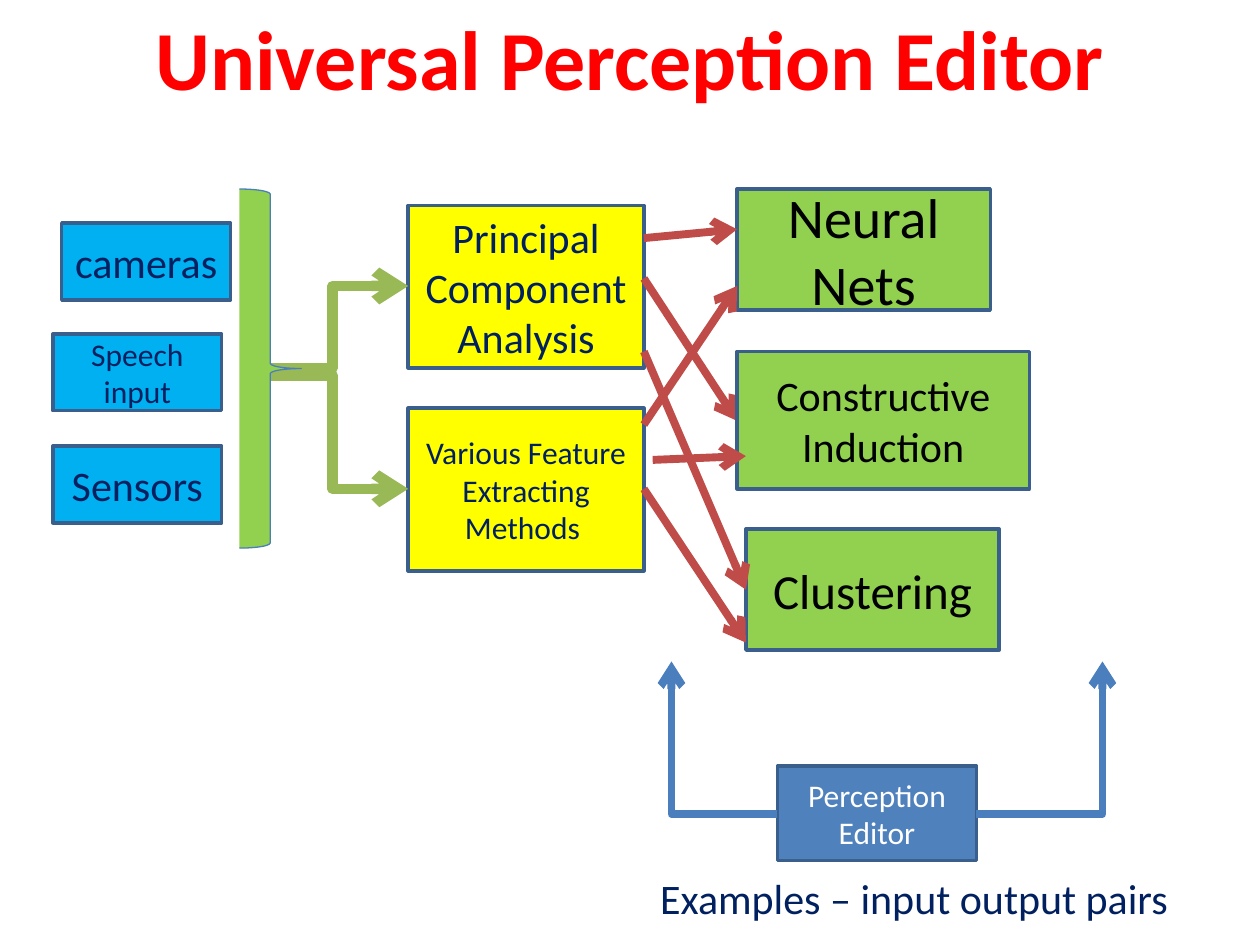
from dataclasses import dataclass

from lxml import etree
from pptx import Presentation
from pptx.dml.color import RGBColor
from pptx.enum.shapes import MSO_CONNECTOR, MSO_SHAPE
from pptx.enum.text import MSO_ANCHOR, PP_ALIGN
from pptx.oxml.ns import qn
from pptx.util import Inches, Pt

RECT, BRACE = MSO_SHAPE.RECTANGLE, MSO_SHAPE.RIGHT_BRACE
STRAIGHT, ELBOW = MSO_CONNECTOR.STRAIGHT, MSO_CONNECTOR.ELBOW
TOP, MIDDLE = MSO_ANCHOR.TOP, MSO_ANCHOR.MIDDLE
CENTER = PP_ALIGN.CENTER
FONT = "Calibri"
COLORS = {
    "sky": "00B0F0", "lime": "92D050", "yellow": "FFFF00", "blue": "4F81BD",
    "edge": "3A5F8C", "steel": "4B7EBC", "brick": "BF4C48", "olive": "98B955",
    "navy": "002060", "black": "000000", "white": "FFFFFF", "red": "FF0000",
}


@dataclass
class Box:
    left: float
    top: float
    width: float
    height: float
    fill: str
    lines: tuple = ()
    size: int = 24
    ink: str = "navy"
    kind: int = RECT
    edge: str = "edge"
    weight: float = 2


@dataclass
class Link:
    start: tuple
    end: tuple
    color: str = "brick"
    weight: float = 4.5
    bends: int = 0


def rgb(name: str) -> RGBColor:
    return RGBColor.from_string(COLORS[name])


def write(shape, lines: tuple, size: int, ink: str, anchor=MIDDLE, bold: bool = False) -> None:
    frame = shape.text_frame
    frame.word_wrap = True
    frame.vertical_anchor = anchor
    for i, line in enumerate(lines):
        para = frame.add_paragraph() if i else frame.paragraphs[0]
        para.alignment = CENTER
        run = para.add_run()
        run.text = line
        run.font.name, run.font.size, run.font.bold = FONT, Pt(size), bold
        run.font.color.rgb = rgb(ink)


def draw_box(slide, box: Box) -> None:
    shape = slide.shapes.add_shape(
        box.kind, Inches(box.left), Inches(box.top), Inches(box.width), Inches(box.height))
    shape.shadow.inherit = False
    shape.fill.solid()
    shape.fill.fore_color.rgb = rgb(box.fill)
    shape.line.color.rgb = rgb(box.edge)
    shape.line.width = Pt(box.weight)
    write(shape, box.lines, box.size, box.ink)


def draw_link(slide, link: Link) -> None:
    """Draw an arrow; one bend turns once, two bends turn halfway."""
    ends = [Inches(v) for v in (*link.start, *link.end)]
    wire = slide.shapes.add_connector(ELBOW if link.bends else STRAIGHT, *ends)
    wire.line.color.rgb = rgb(link.color)
    wire.line.width = Pt(link.weight)
    props = wire._element.spPr
    if link.bends == 1:
        props.find(qn("a:prstGeom")).set("prst", "bentConnector2")
    etree.SubElement(props.find(qn("a:ln")), qn("a:tailEnd")).set("type", "arrow")
    etree.SubElement(props, qn("a:effectLst"))


def draw_text(slide, top: float, left: float, width: float, height: float,
              line: str, size: int, ink: str, anchor=MIDDLE, bold: bool = False) -> None:
    area = slide.shapes.add_textbox(Inches(left), Inches(top), Inches(width), Inches(height))
    write(area, (line,), size, ink, anchor, bold)


# Columns of the flow: box edges that the arrows run between
MID, MID_W = 3.24, 1.87
OUT = MID + MID_W
GOAL, LOW = 5.85, 5.92
FORK = 2.04

# Back to front
ITEMS = [
    Box(6.17, 6.08, 1.58, 0.75, "blue", ("Perception Editor",), 18, "white"),
    Box(0.49, 1.77, 1.34, 0.61, "sky", ("cameras",)),
    Box(GOAL, 1.5, 2.01, 0.96, "lime", ("Neural Nets",), 32, "black"),
    Box(MID, 1.63, MID_W, 1.29, "yellow", ("Principal Component", "Analysis")),
    Link((OUT, 2.21), (GOAL, 3.34)),
    Link((FORK, 2.92), (MID, 2.27), "olive", 6, 2),
    Box(MID, 3.24, MID_W, 1.29, "yellow",
        ("Various Feature", "Extracting", "Methods "), 18),
    Box(GOAL, 2.79, 2.32, 1.09, "lime", ("Constructive", "Induction"), 24, "black"),
    Box(LOW, 4.2, 2.01, 0.96, "lime", ("Clustering",), 28, "black"),
    Link((FORK, 2.98), (MID, 3.88), "olive", 6, 2),
    Link((OUT, 2.79), (LOW, 4.68)),
    Link((OUT, 1.89), (GOAL, 1.82)),
    Link((OUT, 3.88), (LOW, 5.1)),
    Link((5.18, 3.65), (LOW, 3.62)),
    Link((OUT, 3.37), (GOAL, 2.27)),
    Box(0.42, 2.65, 1.34, 0.61, "sky", ("Speech input",), 18),
    Box(0.42, 3.54, 1.34, 0.61, "sky", ("Sensors",)),
    Box(1.9, 1.5, 0.49, 2.85, "lime", kind=BRACE, edge="steel", weight=0.75),
    Link((6.17, 6.46), (5.33, 5.25), "steel", bends=1),
    Link((7.75, 6.46), (8.75, 5.25), "steel", bends=1),
]


def main() -> None:
    deck = Presentation()
    deck.slide_width, deck.slide_height = Inches(10), Inches(7.5)
    slide = deck.slides.add_slide(deck.slide_layouts[6])
    for item in ITEMS:
        if isinstance(item, Box):
            draw_box(slide, item)
        else:
            draw_link(slide, item)
    draw_text(slide, 6.75, 4.92, 4.67, 0.75, "Examples – input output pairs", 24, "navy")
    draw_text(slide, 0, 0, 10, 0.91, "Universal Perception Editor", 48, "red", TOP, True)
    deck.save("out.pptx")


if __name__ == "__main__":
    main()
